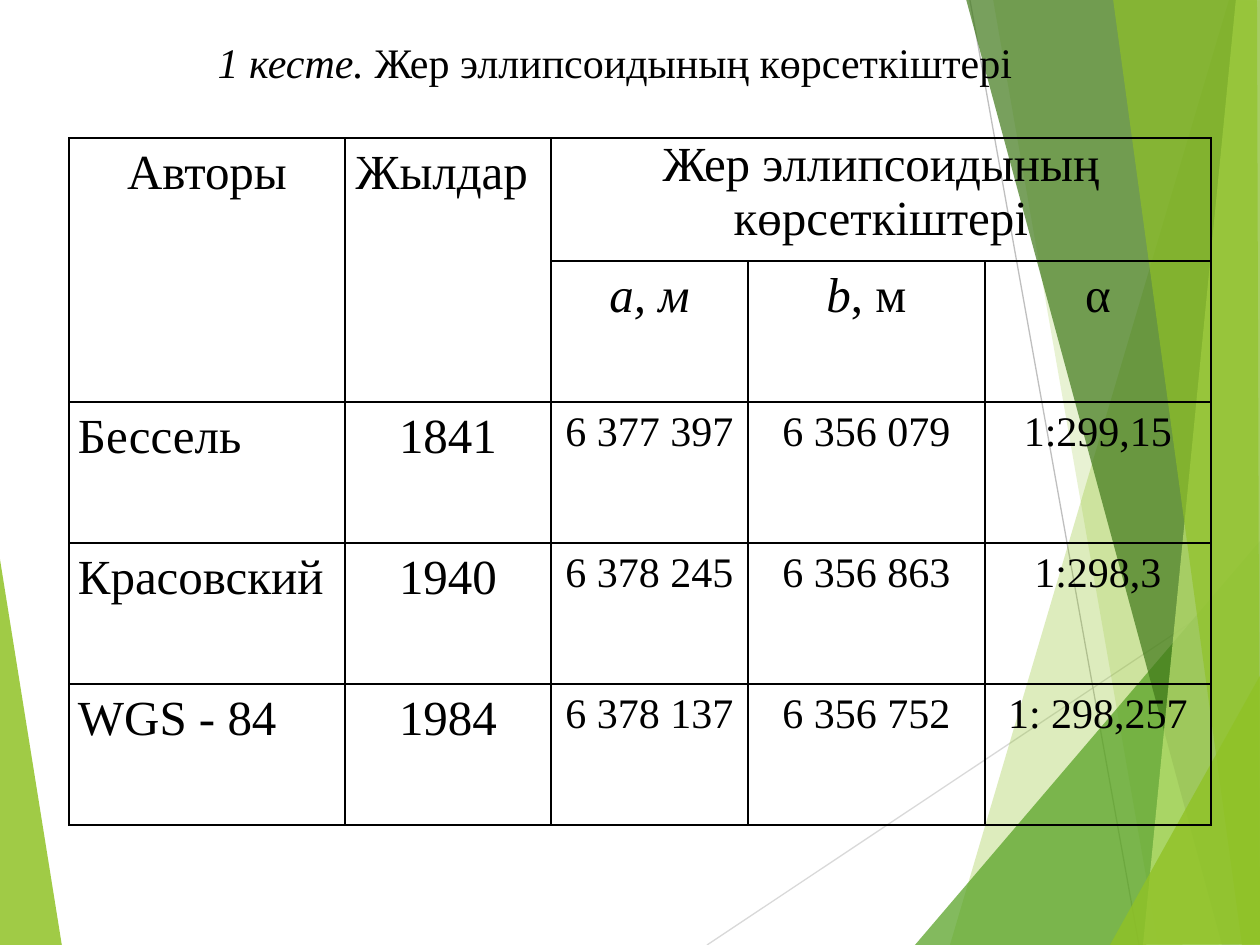
from lxml import etree
from pptx import Presentation
from pptx import util as u
from pptx.dml.color import RGBColor
from pptx.enum import shapes, text
from pptx.oxml import ns

PX = 914400 / 126
BLACK = RGBColor(0x00, 0x00, 0x00)
LIME = RGBColor(0x90, 0xC2, 0x26)
PALE_LIME = RGBColor(0xC0, 0xE4, 0x74)
GREEN = RGBColor(0x54, 0xA0, 0x21)
DARK_GREEN = RGBColor(0x3F, 0x78, 0x19)
GREY = RGBColor(0xBF, 0xBF, 0xBF)
LIGHT_GREY = RGBColor(0xD9, 0xD9, 0xD9)
CENTER, LEFT = text.PP_ALIGN.CENTER, text.PP_ALIGN.LEFT


def px(length):
    return u.Emu(round(length * PX))


def write(paragraph, runs, size, **layout):
    for key, value in layout.items():
        setattr(paragraph, key, value)
    for words, italic in runs:
        run = paragraph.add_run()
        run.text = words
        font = {"name": "Times New Roman", "size": u.Pt(size), "italic": italic}
        for key, value in font.items():
            setattr(run.font, key, value)
        run.font.color.rgb = BLACK


prs = Presentation()
prs.slide_width, prs.slide_height = px(1260), px(945)
slide = prs.slides.add_slide(prs.slide_layouts[6])

left_facet = (LIME, 85, [(-1, 553), (62, 946), (-1, 945)])
rays = [
    (LIGHT_GREY, (707, 945, 1261, 576)),
    (GREY, (970, 0, 1139, 945)),
]
right_facets = [
    (LIME, 30, [(1229, 0), (950, 945), (1262, 946), (1261, 1)]),
    (LIME, 20, [(993, -1), (1158, 945), (1261, 945), (1261, -1)]),
    (GREEN, 72, [(915, 945), (1260, 541), (1261, 945)]),
    (DARK_GREEN, 70, [(966, -1), (1222, 945), (1261, 944), (1261, -1)]),
    (PALE_LIME, 70, [(1236, -1), (1143, 945), (1261, 945), (1260, -1)]),
    (LIME, 65, [(1113, -1), (1242, 945), (1260, 945), (1257, -1)]),
    (LIME, 80, [(1110, 945), (1261, 674), (1261, 944)]),
]

for color, opacity, points in [left_facet, *right_facets]:
    outline = slide.shapes.build_freeform(*points[0], scale=PX)
    outline.add_line_segments(points[1:], close=True)
    facet = outline.convert_to_shape()
    facet.shadow.inherit = False
    facet.line.fill.background()
    facet.fill.solid()
    facet.fill.fore_color.rgb = color
    tint = facet.fill._xPr.find(".//" + ns.qn("a:srgbClr"))
    etree.SubElement(tint, ns.qn("a:alpha"), val=str(opacity * 1000))
    if points is left_facet[2]:
        for ray_color, ends in rays:
            ray = slide.shapes.add_connector(
                shapes.MSO_CONNECTOR.STRAIGHT, *[px(end) for end in ends])
            ray.line.color.rgb = ray_color
            ray.line.width = u.Pt(0.75)
            etree.SubElement(ray._element.spPr, ns.qn("a:effectLst"))

columns = [276, 206, 197, 237, 226]
rows = [123, 141, 141, 141, 141]
ellipsoids = [
    ("Бессель", "1841", "6 377 397", "6 356 079", "1:299,15"),
    ("Красовский", "1940", "6 378 245", "6 356 863", "1:298,3"),
    ("WGS - 84", "1984", "6 378 137", "6 356 752", "1: 298,257"),
]
table = slide.shapes.add_table(
    len(rows), len(columns), px(69), px(138), px(sum(columns)), px(sum(rows))).table
for flag in ("first_row", "horz_banding"):
    setattr(table, flag, False)
for column, width in zip(table.columns, columns):
    column.width = px(width)
for row, height in zip(table.rows, rows):
    row.height = px(height)

cell_format = {"margin_left": px(9), "margin_right": px(9),
               "margin_top": 0, "margin_bottom": 0}
for cell in table.iter_cells():
    for key, value in cell_format.items():
        setattr(cell, key, value)
    tc_pr = cell._tc.get_or_add_tcPr()
    for side in ("lnL", "lnR", "lnT", "lnB"):
        border = etree.SubElement(tc_pr, ns.qn("a:" + side), w=str(u.Pt(1)))
        ink = etree.SubElement(border, ns.qn("a:solidFill"))
        etree.SubElement(ink, ns.qn("a:srgbClr"), val=str(BLACK))
    cell.fill.background()

for first, last in [((0, 0), (1, 0)), ((0, 1), (1, 1)), ((0, 2), (0, 4))]:
    table.cell(*first).merge(table.cell(*last))

headings = [
    (0, 0, [("Авторы", False)], 1.15),
    (0, 1, [("Жылдар ", False)], 1.15),
    (0, 2, [("Жер эллипсоидының көрсеткіштері", False)], 1.0),
    (1, 2, [("а, м", True)], 1.15),
    (1, 3, [("b", True), (", м", False)], 1.15),
    (1, 4, [("α", False)], 1.15),
]
for r, c, runs, spacing in headings:
    write(table.cell(r, c).text_frame.paragraphs[0], runs, 28,
          alignment=CENTER, line_spacing=spacing)
for r, ellipsoid in enumerate(ellipsoids, 2):
    for c, value in enumerate(ellipsoid):
        write(table.cell(r, c).text_frame.paragraphs[0], [(value, False)],
              28 if c < 2 else 24,
              alignment=CENTER if c else LEFT, line_spacing=1.15)

caption = slide.shapes.add_textbox(px(39), px(29), px(1152), px(102)).text_frame
caption_format = {"word_wrap": True, "margin_bottom": px(42),
                  "vertical_anchor": text.MSO_ANCHOR.MIDDLE}
for key, value in caption_format.items():
    setattr(caption, key, value)
write(caption.paragraphs[0],
      [("1 кесте. ", True), ("Жер эллипсоидының көрсеткіштері", False)],
      24, alignment=CENTER)

prs.save("out.pptx")
